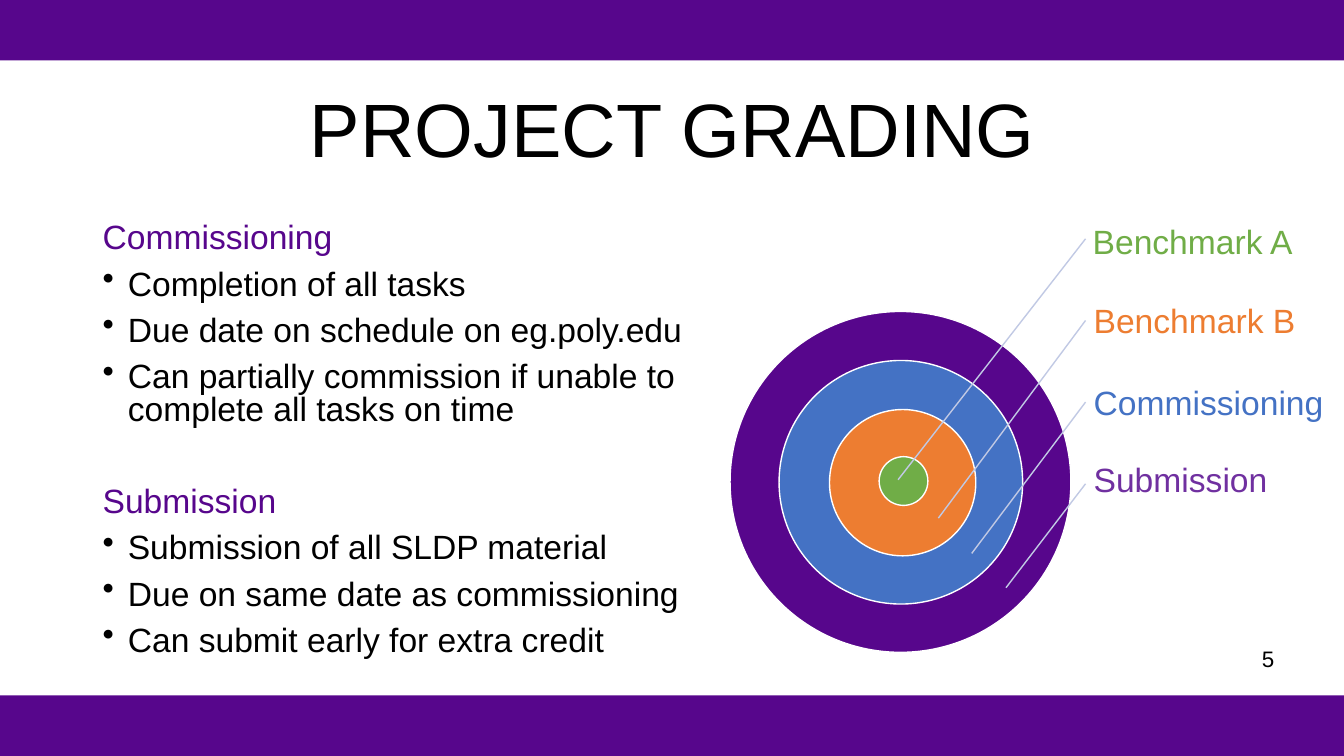
"""Build the project grading slide with its target diagram."""
import pptx
import pptx.dml.color
import pptx.enum.shapes
import pptx.enum.text
import pptx.oxml.ns
import pptx.util

Pt = pptx.util.Pt
RGBColor = pptx.dml.color.RGBColor
Shape = pptx.enum.shapes.MSO_SHAPE
Align = pptx.enum.text.PP_ALIGN
Anchor = pptx.enum.text.MSO_ANCHOR

VIOLET = RGBColor(0x57, 0x06, 0x8C)
PURPLE = RGBColor(0x70, 0x30, 0xA0)
BLUE = RGBColor(0x44, 0x72, 0xC4)
ORANGE = RGBColor(0xED, 0x7D, 0x31)
GREEN = RGBColor(0x70, 0xAD, 0x47)
LAVENDER = RGBColor(0xC1, 0xC9, 0xE4)
BLACK = RGBColor(0, 0, 0)
WHITE = RGBColor(0xFF, 0xFF, 0xFF)

WIDTH, HEIGHT, BAND = 960, 540, 43.2
TITLE = "PROJECT GRADING"
PAGE_NUMBER = "5"
SECTIONS = {
    "Commissioning": [
        "Completion of all tasks",
        "Due date on schedule on eg.poly.edu",
        "Can partially commission if unable to complete all tasks on time",
    ],
    "Submission": [
        "Submission of all SLDP material",
        "Due on same date as commissioning",
        "Can submit early for extra credit",
    ],
}
RINGS = [
    (521.5, 222.5, 243.5, VIOLET),
    (556.5, 257.5, 174, BLUE),
    (592.5, 292.5, 104.5, ORANGE),
    (628, 326.2, 34.8, GREEN),
]
LABELS = [
    ("Benchmark A", GREEN, (766.8, 144.7, 193), (641.5, 342.7)),
    ("Benchmark B", ORANGE, (767.5, 201.6, 168), (670.3, 370.1)),
    ("Commissioning", BLUE, (767.5, 259.9, 182), (694.1, 395.3)),
    ("Submission", PURPLE, (767.5, 314.6, 145), (718.6, 419.8)),
]
LABEL_HEIGHT = 58.3
LEADER_X, LEADER_TOP, LEADER_STEP = 775.4, 170.6, 58.33
SECTION_GAP = 43


def add_box(page, left, top, width, height, wrap=True):
    box = page.shapes.add_textbox(Pt(left), Pt(top), Pt(width), Pt(height))
    box.text_frame.word_wrap = wrap
    box.text_frame.vertical_anchor = Anchor.MIDDLE
    return box.text_frame


def style(para, text, size, color, spacing=None):
    para.text = text
    para.line_spacing = spacing
    para.font.name = "Arial"
    para.font.size = Pt(size)
    para.font.color.rgb = color


def add_bullet(para):
    properties = para._p.get_or_add_pPr()
    properties.set("marL", str(Pt(18)))
    properties.set("indent", str(-Pt(18)))
    bullet = properties.makeelement(pptx.oxml.ns.qn("a:buChar"), {"char": "•"})
    properties.append(bullet)


def add_filled(page, kind, left, top, width, height, color):
    shape = page.shapes.add_shape(kind, Pt(left), Pt(top), Pt(width), Pt(height))
    shape.shadow.inherit = False
    shape.fill.solid()
    shape.fill.fore_color.rgb = color
    shape.line.fill.background()
    return shape


def add_sections(page):
    frame = add_box(page, 66.24, 144, 525.6, 342.72)
    for number, (heading, items) in enumerate(SECTIONS.items()):
        para = frame.add_paragraph() if number else frame.paragraphs[0]
        if number:
            para.space_before = Pt(SECTION_GAP)
        style(para, heading, 24, VIOLET, 0.8)
        for item in items:
            para = frame.add_paragraph()
            add_bullet(para)
            para.space_before = Pt(10)
            style(para, item, 24, BLACK, 0.8)


def add_target(page):
    for left, top, diameter, color in RINGS:
        ring = add_filled(page, Shape.OVAL, left, top, diameter, diameter, color)
        ring.line.color.rgb = WHITE
        ring.line.width = Pt(1)
    for row, (text, color, (left, top, width), (end_x, end_y)) in enumerate(LABELS):
        frame = add_box(page, left, top, width, LABEL_HEIGHT)
        frame.margin_left = Pt(13.7)
        frame.margin_top = frame.margin_right = frame.margin_bottom = Pt(2.2)
        style(frame.paragraphs[0], text, 24, color, 0.9)
        leader = page.shapes.add_connector(
            pptx.enum.shapes.MSO_CONNECTOR.STRAIGHT,
            Pt(LEADER_X), Pt(LEADER_TOP + row * LEADER_STEP), Pt(end_x), Pt(end_y))
        leader.line.color.rgb = LAVENDER
        leader.line.width = Pt(1)
        properties = leader._element.spPr
        properties.append(properties.makeelement(pptx.oxml.ns.qn("a:effectLst"), {}))


def main():
    deck = pptx.Presentation()
    deck.slide_width, deck.slide_height = Pt(WIDTH), Pt(HEIGHT)
    page = deck.slides.add_slide(deck.slide_layouts[6])
    for top in (0, HEIGHT - BAND):
        add_filled(page, Shape.RECTANGLE, 0, top, WIDTH, BAND, VIOLET)
    number = add_box(page, 894.24, 457.2, 36.7, 26.6, wrap=False)
    style(number.paragraphs[0], PAGE_NUMBER, 16, BLACK)
    title = add_box(page, 66.24, 42.48, 828, 104.4).paragraphs[0]
    title.alignment = Align.CENTER
    style(title, TITLE, 54, BLACK, 0.9)
    add_sections(page)
    add_target(page)
    deck.save("out.pptx")


if __name__ == "__main__":
    main()
